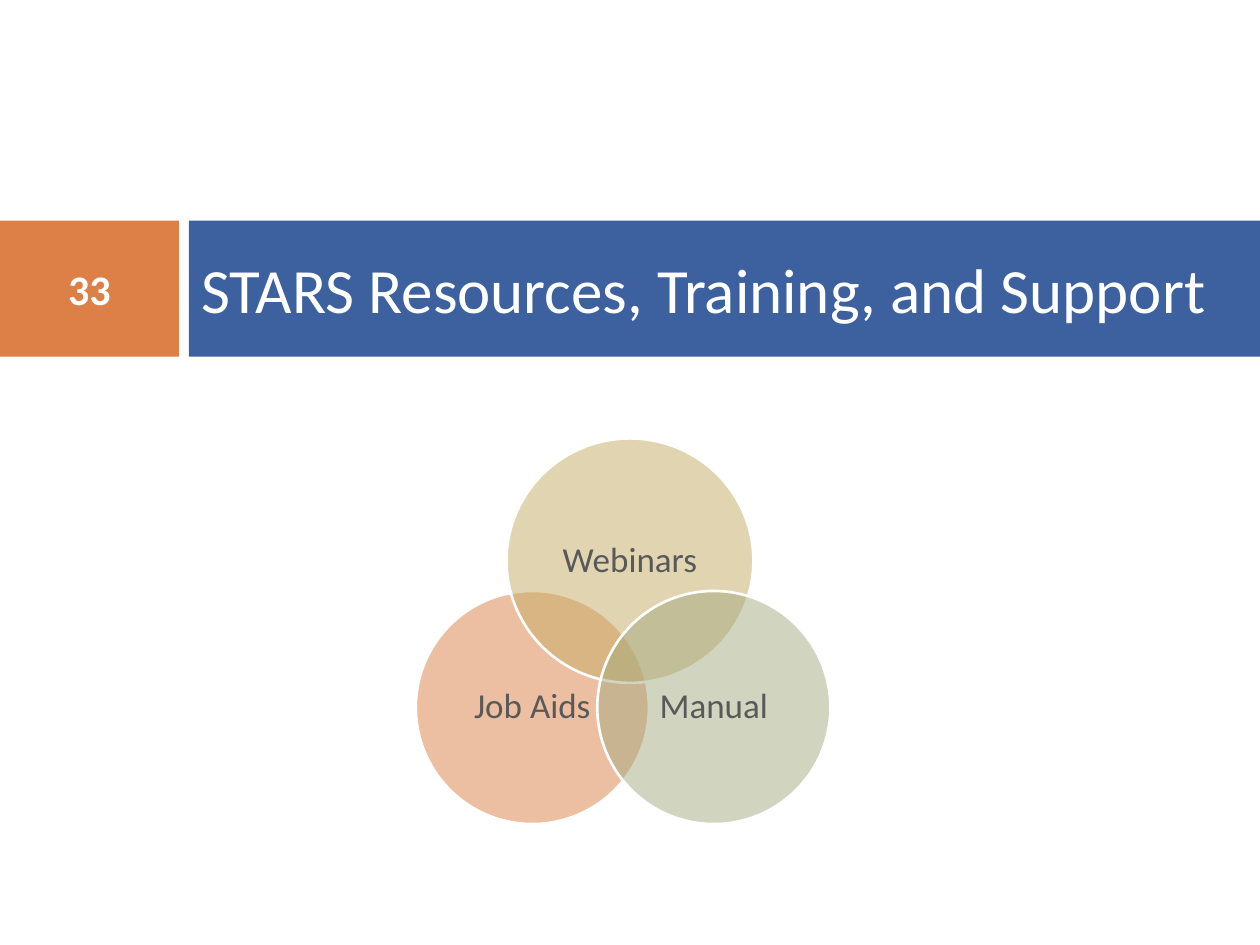
"""Build the section slide on STARS resources, training and support."""
from dataclasses import dataclass

from lxml.etree import SubElement
from pptx import Presentation
from pptx.dml.color import RGBColor
from pptx.enum.shapes import MSO_SHAPE
from pptx.enum.text import MSO_ANCHOR, PP_ALIGN
from pptx.oxml.ns import qn
from pptx.shapes.autoshape import Shape
from pptx.slide import Slide
from pptx.util import Inches, Pt

COLUMNS, ROWS = 1000, 750
CELL = Inches(10) // COLUMNS


@dataclass(frozen=True)
class Theme:
    font: str = "Calibri"
    orange: str = "DD8047"
    blue: str = "3C619E"
    sand: str = "C4AD64"
    sage: str = "A5AB81"
    white: str = "FFFFFF"
    grey: str = "595959"
    title_size: int = 36
    number_size: int = 24
    label_size: int = 20
    outline: float = 1.5
    opacity: int = 50


@dataclass(frozen=True)
class Box:
    column: int
    row: int
    width: int
    height: int


@dataclass(frozen=True)
class Band:
    text: str
    box: Box
    fill: str
    size: int
    align: PP_ALIGN
    bold: bool


@dataclass(frozen=True)
class Circle:
    label: str
    box: Box
    fill: str


THEME = Theme()
BAND_TOP, BAND_HEIGHT = 175, 108
NUMBER_WIDTH, TITLE_LEFT = 142, 150
LOWER_TOP, LOWER_SIZE = 469, 185

BANDS = (
    Band("33", Box(0, BAND_TOP, NUMBER_WIDTH, BAND_HEIGHT),
         THEME.orange, THEME.number_size, PP_ALIGN.CENTER, True),
    Band("STARS Resources, Training, and Support",
         Box(TITLE_LEFT, BAND_TOP, COLUMNS - TITLE_LEFT, BAND_HEIGHT),
         THEME.blue, THEME.title_size, PP_ALIGN.LEFT, False),
)
CIRCLES = (
    Circle("Job Aids", Box(330, LOWER_TOP, LOWER_SIZE, LOWER_SIZE), THEME.orange),
    Circle("Webinars", Box(402, 348, 196, 194), THEME.sand),
    Circle("Manual", Box(474, LOWER_TOP, LOWER_SIZE, LOWER_SIZE), THEME.sage),
)


def add_filled(slide: Slide, kind: MSO_SHAPE, box: Box, fill: str) -> Shape:
    """Add a flat shape placed on the grid."""
    shape = slide.shapes.add_shape(
        kind, box.column * CELL, box.row * CELL, box.width * CELL, box.height * CELL)
    shape.shadow.inherit = False
    shape.fill.solid()
    shape.fill.fore_color.rgb = RGBColor.from_string(fill)
    return shape


def write(shape: Shape, text: str, size: int, color: str,
          align: PP_ALIGN, bold: bool = False) -> None:
    """Write one vertically centred paragraph into a shape."""
    frame = shape.text_frame
    frame.text = text
    frame.word_wrap = True
    frame.vertical_anchor = MSO_ANCHOR.MIDDLE
    paragraph = frame.paragraphs[0]
    paragraph.alignment = align
    font = paragraph.runs[0].font
    font.name, font.size, font.bold = THEME.font, Pt(size), bold
    font.color.rgb = RGBColor.from_string(color)


def draw_band(slide: Slide, band: Band) -> None:
    """Draw a heading band with its text."""
    shape = add_filled(slide, MSO_SHAPE.RECTANGLE, band.box, band.fill)
    shape.line.fill.background()
    write(shape, band.text, band.size, THEME.white, band.align, band.bold)


def draw_circle(slide: Slide, circle: Circle) -> None:
    """Draw a translucent labelled circle of the Venn diagram."""
    shape = add_filled(slide, MSO_SHAPE.OVAL, circle.box, circle.fill)
    color = shape.fill._xPr.find(qn("a:solidFill"))[0]
    SubElement(color, qn("a:alpha"), val=str(THEME.opacity * 1000))
    shape.line.color.rgb = RGBColor.from_string(THEME.white)
    shape.line.width = Pt(THEME.outline)
    write(shape, circle.label, THEME.label_size, THEME.grey, PP_ALIGN.CENTER)
    frame = shape.text_frame
    frame.margin_left = frame.margin_right = Inches(0.08)
    frame.margin_top = frame.margin_bottom = Inches(0.08)
    frame.paragraphs[0].line_spacing = 0.9


def main() -> None:
    """Build and save the slide."""
    deck = Presentation()
    deck.slide_width, deck.slide_height = COLUMNS * CELL, ROWS * CELL
    slide = deck.slides.add_slide(deck.slide_layouts[6])
    for band in BANDS:
        draw_band(slide, band)
    for circle in CIRCLES:
        draw_circle(slide, circle)
    deck.save("out.pptx")


if __name__ == "__main__":
    main()
